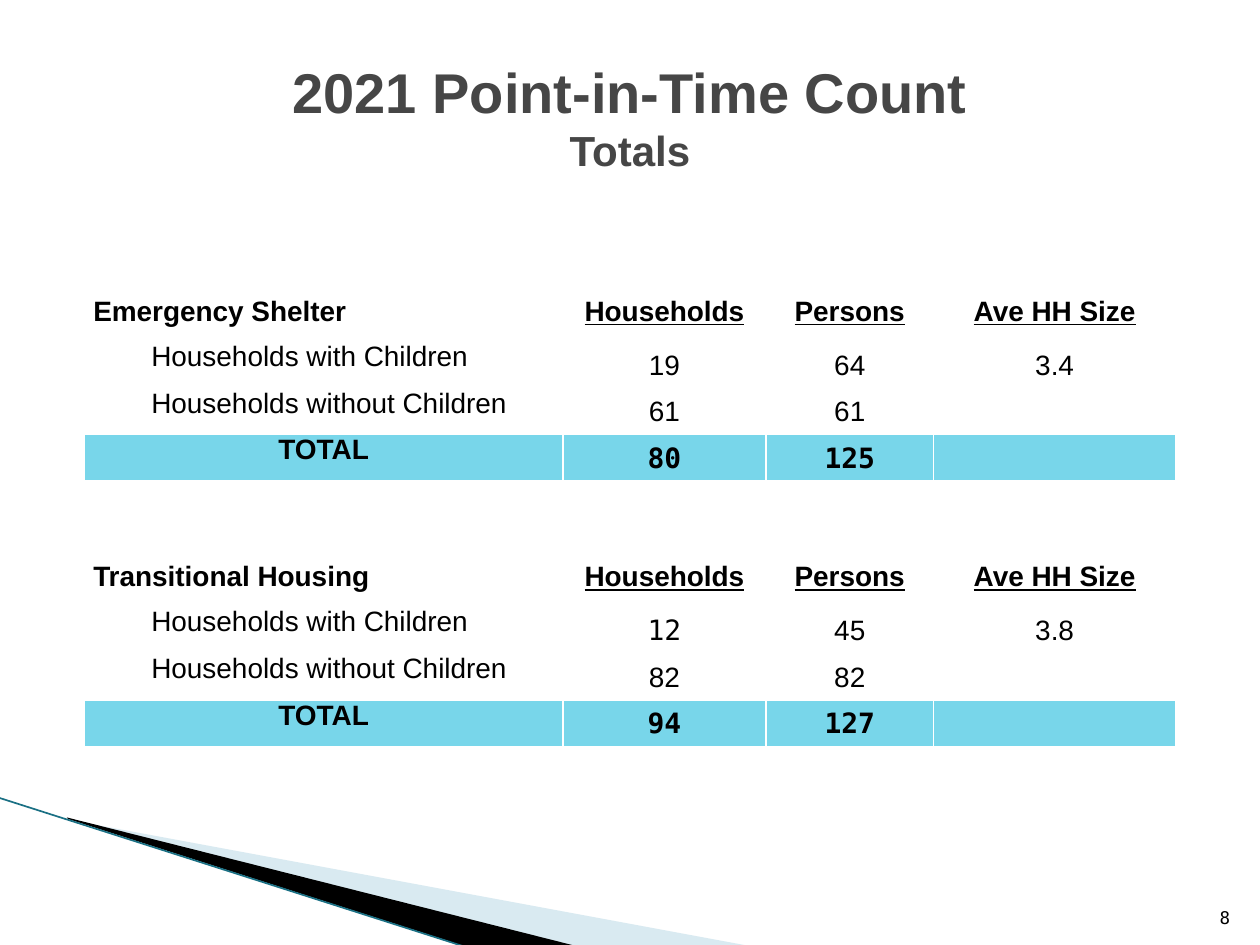
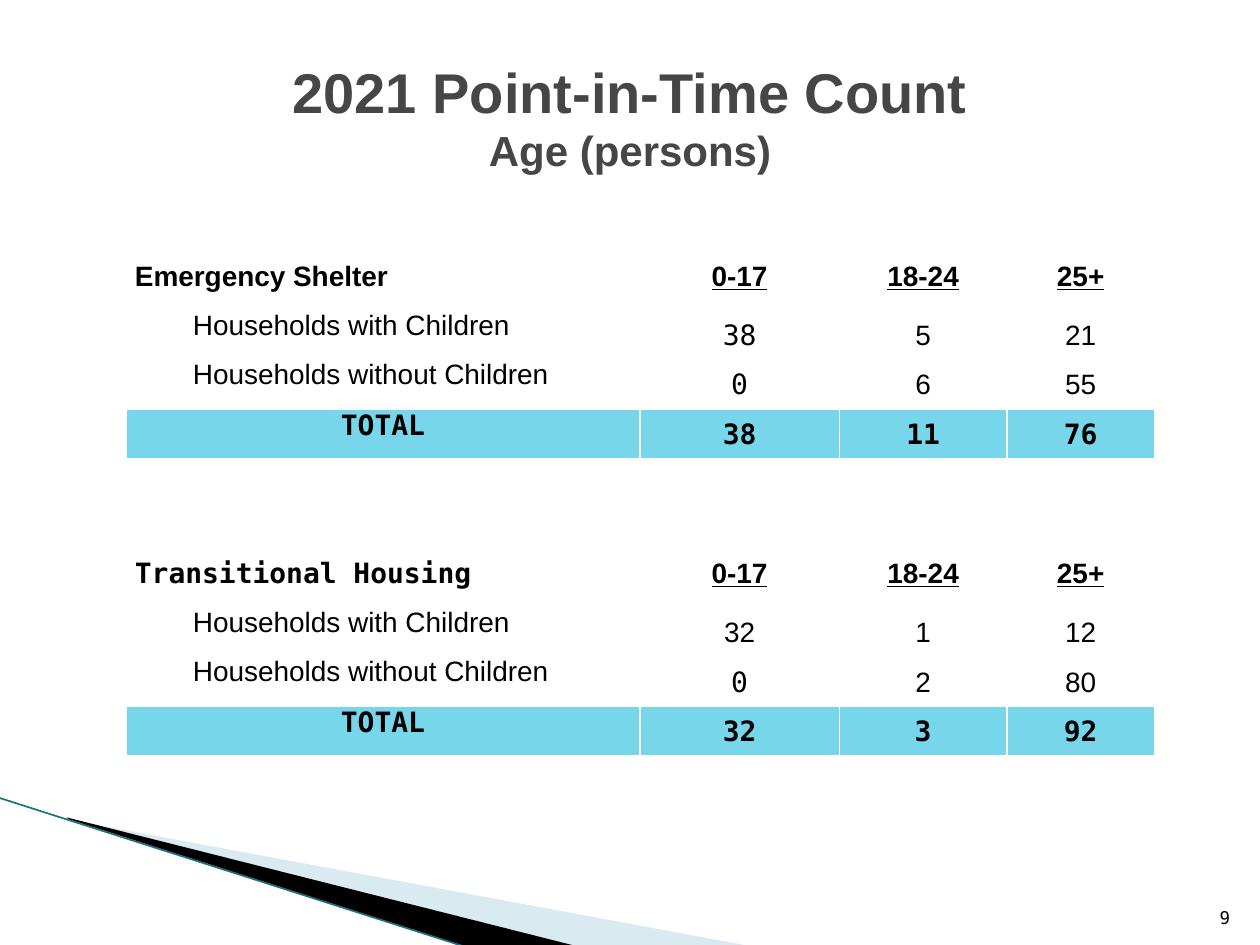
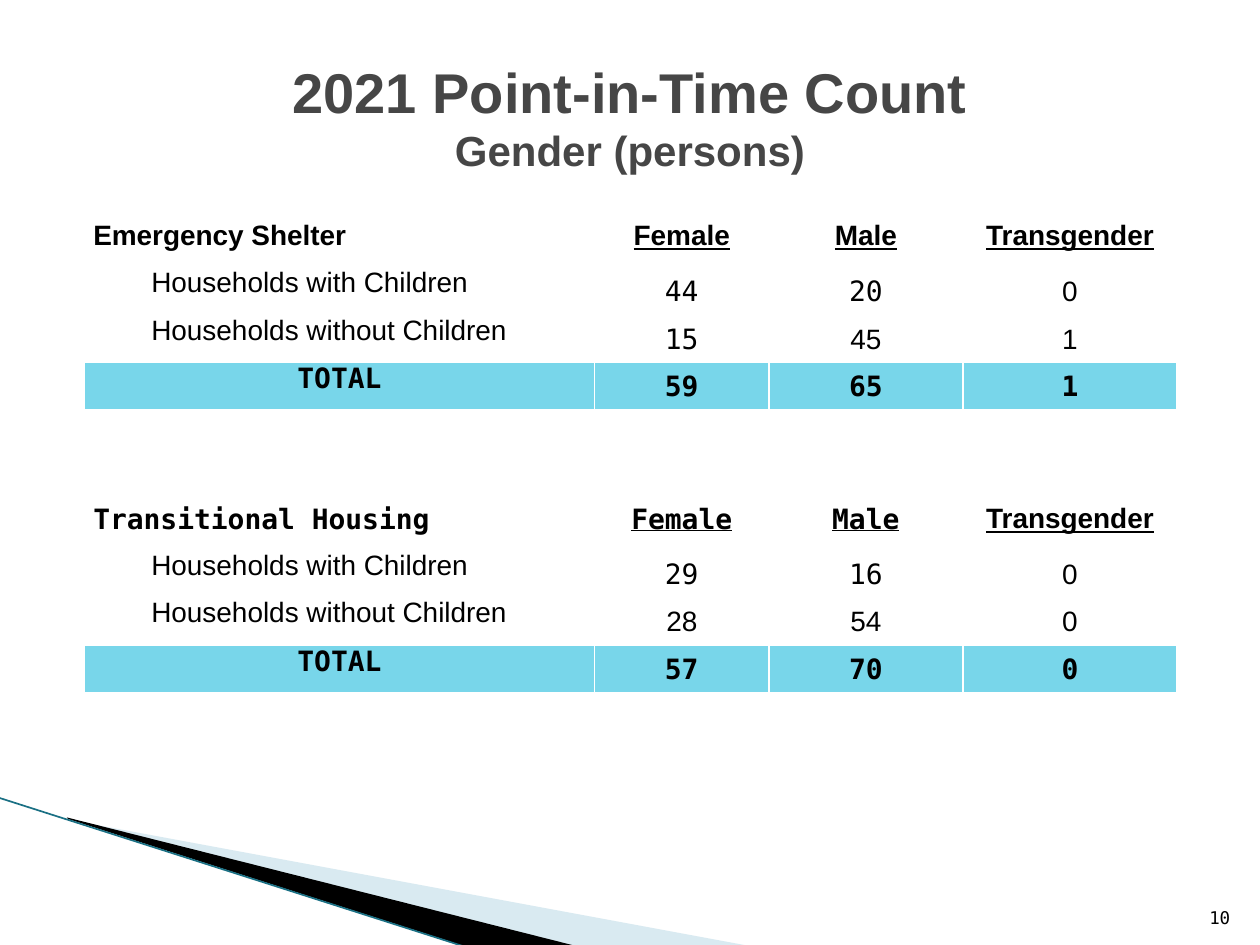
from copy import deepcopy
from dataclasses import dataclass

from lxml.etree import SubElement
from pptx import Presentation
from pptx.dml.color import RGBColor
from pptx.enum.shapes import MSO_CONNECTOR
from pptx.enum.text import MSO_ANCHOR, MSO_AUTO_SIZE, PP_ALIGN
from pptx.oxml.ns import qn
from pptx.util import Cm, Pt

# Shared look
COLORS = {
    "title": "464646",
    "text": "000000",
    "total": "78D6EA",
    "border": "FFFFFF",
    "pale_wedge": "A0CBDC",
    "dark_wedge": "000000",
    "edge": "1A7084",
}
SANS, MONO = "Arial", "DejaVu Sans Mono"
TITLE = "2021 Point-in-Time Count"
WITH, WITHOUT, TOTAL = "Households with Children", "Households without Children", "TOTAL"
SHELTER, HOUSING = "Emergency Shelter", "Transitional Housing"
GAP_ROWS = 2


class Mono(str):
    """Cell text set in the monospaced font."""


@dataclass
class Group:
    """One block of a table: heading, two household kinds and the total."""
    heading: tuple[str, ...]
    with_children: tuple[str, ...]
    without_children: tuple[str, ...]
    total: tuple[str, ...]

    def rows(self) -> list[tuple[str, ...]]:
        return [self.heading, (WITH, *self.with_children),
                (WITHOUT, *self.without_children), self.total]


@dataclass
class CountSlide:
    number: int
    subtitle: str
    left: float
    top: float
    col_widths: tuple[float, ...]
    heading_height: float
    row_height: float
    gap_height: float
    groups: tuple[Group, Group]


def mono(*texts: str) -> tuple[Mono, ...]:
    return tuple(Mono(t) for t in texts)


SLIDES = [
    CountSlide(
        8, "Totals", 1.7, 5.97, (9.65, 4.09, 3.38, 4.88), 0.91, 0.94, 0.81,
        (Group((SHELTER, "Households", "Persons", "Ave HH Size"),
               ("19", "64", "3.4"), ("61", "61", ""),
               (TOTAL, *mono("80", "125", ""))),
         Group((HOUSING, "Households", "Persons", "Ave HH Size"),
               (Mono("12"), "45", "3.8"), ("82", "82", ""),
               (TOTAL, *mono("94", "127", ""))))),
    CountSlide(
        9, "Age (persons)", 2.54, 5.26, (10.36, 4.02, 3.38, 2.97), 0.99, 1, 1,
        (Group((SHELTER, "0-17", "18-24", "25+"),
               (Mono("38"), "5", "21"), (Mono("0"), "6", "55"),
               mono(TOTAL, "38", "11", "76")),
         Group((Mono(HOUSING), "0-17", "18-24", "25+"),
               ("32", "1", "12"), (Mono("0"), "2", "80"),
               mono(TOTAL, "32", "3", "92")))),
    CountSlide(
        10, "Gender (persons)", 1.7, 4.45, (10.29, 3.51, 3.91, 4.32), 0.94, 0.96, 0.94,
        (Group((SHELTER, "Female", "Male", "Transgender"),
               (*mono("44", "20"), "0"), (Mono("15"), "45", "1"),
               mono(TOTAL, "59", "65", "1")),
         Group((*mono(HOUSING, "Female", "Male"), "Transgender"),
               (*mono("29", "16"), "0"), ("28", "54", "0"),
               mono(TOTAL, "57", "70", "0")))),
]


def rgb(name: str) -> RGBColor:
    return RGBColor.from_string(COLORS[name])


def add_run(p, text: str, size: float, font: str, color: str, bold: bool = False):
    r = p.add_run()
    r.text = text
    r.font.size, r.font.name, r.font.bold = Pt(size), font, bold
    r.font.color.rgb = rgb(color)
    return r


# Corner decoration, shared through the layout
def add_wedge(slide, points: list[tuple[float, float]], color: str, alpha: int = 100):
    (x, y), *rest = [(Cm(a), Cm(b)) for a, b in points]
    builder = slide.shapes.build_freeform(x, y)
    builder.add_line_segments(rest, close=True)
    sp = builder.convert_to_shape()
    sp.shadow.inherit = False
    sp.fill.solid()
    sp.fill.fore_color.rgb = rgb(color)
    sp.line.fill.background()
    if alpha < 100:
        clr = sp.element.spPr.find(f".//{qn('a:srgbClr')}")
        SubElement(clr, qn("a:alpha"), val=str(alpha * 1000))
    return sp


def decorate_layout(layout, slide) -> None:
    pale = add_wedge(slide, [(1.4, 16.53), (15.11, 19.07), (11.58, 19.07), (1.4, 16.51)],
                     "pale_wedge", 40)
    dark = add_wedge(slide, [(1.35, 16.48), (11.61, 19.07), (9.45, 19.1), (1.37, 16.51)],
                     "dark_wedge")
    edge = slide.shapes.add_connector(MSO_CONNECTOR.STRAIGHT, Cm(-0.03), Cm(16.08),
                                      Cm(9.42), Cm(19.1))
    edge.line.color.rgb = rgb("edge")
    edge.line.width = Pt(0.95)
    SubElement(edge.element.spPr, qn("a:effectLst"))
    for sp in (pale, dark, edge):
        layout.shapes.element.append(sp.element)


# Title and slide number
def set_title(slide, subtitle: str) -> None:
    sp = slide.shapes.title
    sp.left, sp.top, sp.width, sp.height = Cm(1.27), Cm(0.76), Cm(22.86), Cm(3.18)
    tf = sp.text_frame
    tf.auto_size = MSO_AUTO_SIZE.NONE
    tf.vertical_anchor = MSO_ANCHOR.MIDDLE
    p = tf.paragraphs[0]
    p.alignment = PP_ALIGN.CENTER
    r = add_run(p, TITLE, 32, SANS, "title", True)
    p.add_line_break()
    r._r.getnext().append(deepcopy(r._r.rPr))  # the break keeps the title size
    add_run(p, subtitle, 24, SANS, "title", True)


def add_number(slide, number: int) -> None:
    sp = slide.shapes.add_textbox(Cm(24.03), Cm(17.81), Cm(1.02), Cm(1.02))
    tf = sp.text_frame
    tf.word_wrap = True
    tf.vertical_anchor = MSO_ANCHOR.BOTTOM
    p = tf.paragraphs[0]
    p.alignment = PP_ALIGN.RIGHT
    add_run(p, str(number), 10, MONO, "text")


# Table
def set_borders(cell) -> None:
    tc_pr = cell._tc.get_or_add_tcPr()
    for i, side in enumerate(("lnL", "lnR", "lnT", "lnB")):
        ln = tc_pr.makeelement(qn(f"a:{side}"), {"w": str(Pt(1))})
        fill = SubElement(ln, qn("a:solidFill"))
        SubElement(fill, qn("a:srgbClr"), val=COLORS["border"])
        tc_pr.insert(i, ln)


def clear_cell(cell) -> None:
    cell.margin_left = cell.margin_right = cell.margin_top = cell.margin_bottom = 0
    cell.fill.background()
    set_borders(cell)


def fill_cell(cell, text: str, kind: int, col: int) -> None:
    """Kind is the row within its group: 0 heading, 1 and 2 counts, 3 total."""
    heading, total = kind == 0, kind == 3
    if total:
        cell.fill.solid()
        cell.fill.fore_color.rgb = rgb("total")
    if not text:
        return
    is_count = col > 0 and not heading
    cell.margin_left = cell.margin_right = Cm(0.03 if is_count else 0.18)
    if is_count:
        cell.margin_top = Cm(0.03)
        cell.vertical_anchor = MSO_ANCHOR.MIDDLE
    p = cell.text_frame.paragraphs[0]
    if col or total:
        p.alignment = PP_ALIGN.CENTER
    elif not heading:
        p._p.get_or_add_pPr().set("marL", str(Cm(1.17)))
    font = MONO if isinstance(text, Mono) else SANS
    r = add_run(p, text, 16, font, "text", heading or total)
    r.font.underline = heading and col > 0


def add_count_table(slide, data: CountSlide) -> None:
    group_heights = [data.heading_height] + [data.row_height] * 3
    heights = group_heights + [data.gap_height] * GAP_ROWS + group_heights
    table = slide.shapes.add_table(
        len(heights), len(data.col_widths), Cm(data.left), Cm(data.top),
        Cm(sum(data.col_widths)), Cm(sum(heights))).table
    table.first_row = table.horz_banding = False
    for column, width in zip(table.columns, data.col_widths):
        column.width = Cm(width)
    for row, height in zip(table.rows, heights):
        row.height = Cm(height)
    for cell in table.iter_cells():
        clear_cell(cell)
    for g, group in enumerate(data.groups):
        first = g * (len(group_heights) + GAP_ROWS)
        for kind, texts in enumerate(group.rows()):
            for col, text in enumerate(texts):
                fill_cell(table.cell(first + kind, col), text, kind, col)


def main() -> None:
    prs = Presentation()
    prs.slide_width, prs.slide_height = Cm(25.4), Cm(19.05)
    layout = prs.slide_layouts[5]
    for i, data in enumerate(SLIDES):
        slide = prs.slides.add_slide(layout)
        if i == 0:
            decorate_layout(layout, slide)
        set_title(slide, data.subtitle)
        add_count_table(slide, data)
        add_number(slide, data.number)
    prs.save("out.pptx")


if __name__ == "__main__":
    main()
